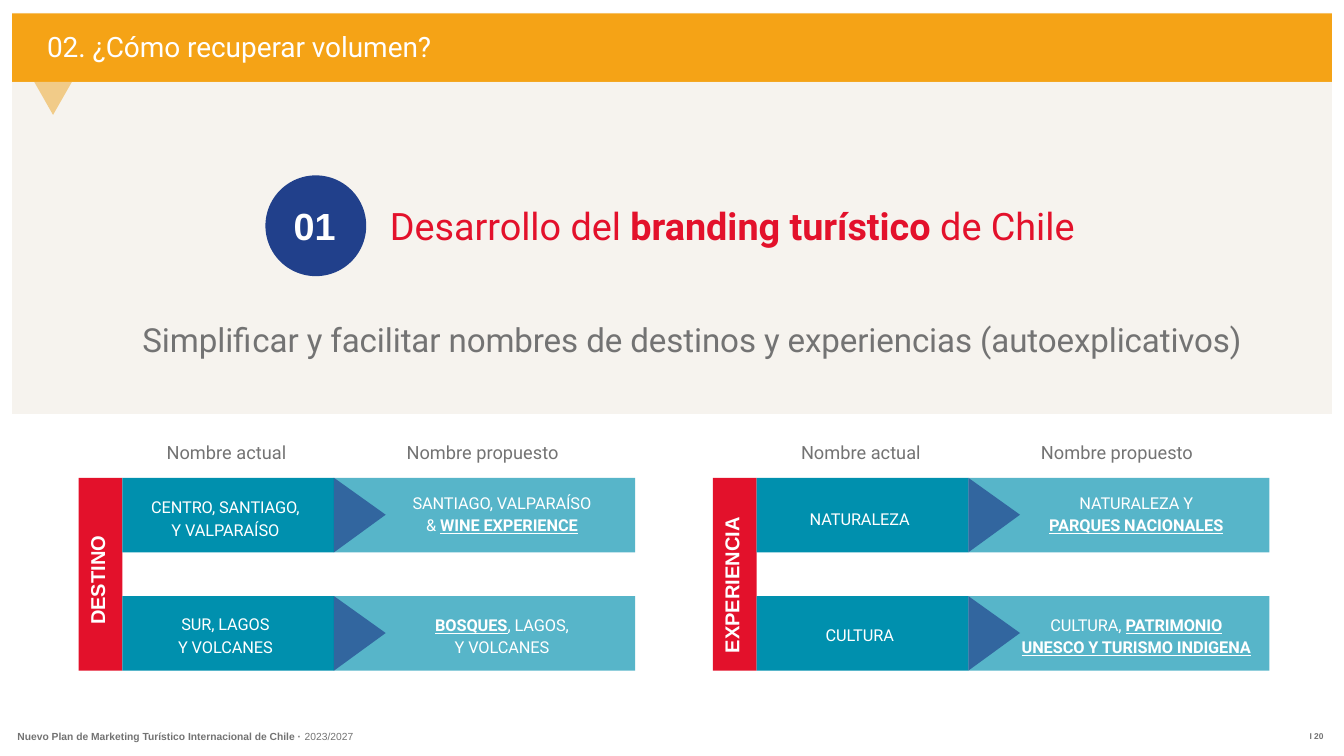
from lxml import etree
from pptx import Presentation
from pptx import util as u
from pptx.dml.color import RGBColor
from pptx.enum import shapes, text
from pptx.oxml.ns import qn

PX = 9144  # EMU per px, 100 px to the inch

ORANGE, BEIGE, NAVY, RED = "F5A316", "EFEBE2", "21408B", "E3112B"
TEAL, GREY, WHITE = "0090AE", "737373", "FFFFFF"
CELL = dict(size=17.5, color=WHITE, spacing=-10)
LABEL = dict(size=19.5, color=GREY)

# Each row: current name, its drop, proposed name, its drop (*bold underlined*)
BLOCKS = [
    (117, "DESTINO", 219, 30, [
        ("CENTRO, SANTIAGO,\nY VALPARAÍSO", 3,
         "SANTIAGO, VALPARAÍSO\n& *WINE EXPERIENCE*", -4),
        ("SUR, LAGOS\nY VOLCANES", 1, "*BOSQUES*, LAGOS,\nY VOLCANES", 2)]),
    (1061, "EXPERIENCIA", 261, -10, [
        ("NATURALEZA", 3, "NATURALEZA Y\n*PARQUES NACIONALES*", -4),
        ("CULTURA", 1,
         "CULTURA, *PATRIMONIO*\n*UNESCO Y TURISMO INDIGENA*", 2)]),
]


def rgb(hex_code):
    return RGBColor.from_string(hex_code)


def px(*lengths):
    return [n * PX for n in lengths]


def paint(sp, color, alpha=None):
    """Give a flat fill with no line or shadow; alpha is opacity in percent."""
    sp.shadow.inherit = False
    sp.line.fill.background()
    sp.fill.solid()
    sp.fill.fore_color.rgb = rgb(color)
    if alpha:
        clr = sp.fill._xPr.find(qn("a:solidFill"))[0]
        etree.SubElement(clr, qn("a:alpha")).set("val", str(alpha * 1000))
    return sp


def add_rect(s, box, color, alpha=None, kind=shapes.MSO_SHAPE.RECTANGLE):
    return paint(s.shapes.add_shape(kind, *px(*box)), color, alpha)


def add_polygon(s, points, color, alpha=None):
    fb = s.shapes.build_freeform(*points[0], scale=PX)
    fb.add_line_segments(points[1:], close=True)
    return paint(fb.convert_to_shape(), color, alpha)


def set_frame(sp, margins=(0, 2, 0, 0), anchor=text.MSO_ANCHOR.TOP):
    tf = sp.text_frame
    left, top, right, bottom = px(*margins)
    frame = dict(word_wrap=True, auto_size=text.MSO_AUTO_SIZE.NONE,
                 vertical_anchor=anchor, margin_left=left, margin_top=top,
                 margin_right=right, margin_bottom=bottom)
    for name, value in frame.items():
        setattr(tf, name, value)
    return tf


def add_run(p, words, size, color, font="Roboto", bold=False,
            underline=False, spacing=0):
    r = p.add_run()
    r.text = words
    values = dict(size=u.Pt(size), name=font, bold=bold, underline=underline)
    for name, value in values.items():
        setattr(r.font, name, value)
    r.font.color.rgb = rgb(color)
    r._r.get_or_add_rPr().set("spc", str(spacing))


def add_text(s, box, runs, line=None):
    """Add a text box with one paragraph of (words, format) runs."""
    sp = s.shapes.add_textbox(*px(*box))
    p = set_frame(sp).paragraphs[0]
    if line:
        p.line_spacing = u.Pt(line)
    for words, fmt in runs:
        add_run(p, words, **fmt)
    return sp


def fill_cell(sp, words, left, right, drop):
    """Centre the lines in a cell, lowered by drop px."""
    tf = set_frame(sp, (left, 10 + drop, right, 10 - drop),
                   text.MSO_ANCHOR.MIDDLE)
    for i, row in enumerate(words.split("\n")):
        p = tf.add_paragraph() if i else tf.paragraphs[0]
        p.alignment = text.PP_ALIGN.CENTER
        p.line_spacing = u.Pt(24)
        for j, part in enumerate(row.split("*")):
            if part:
                add_run(p, part, bold=j % 2 == 1, underline=j % 2 == 1, **CELL)


def add_header(s, x, y, w, h):
    add_rect(s, (x, y - 1, w, 1), BEIGE, 56)
    end, base = x + w, y + h
    add_polygon(s, [(x, y), (end, y), (end, base), (x + 89, base),
                    (x + 61, base + 49), (x + 33, base), (x, base)], ORANGE)
    add_text(s, (x + 52, y + 22, 640, 53),
             [("02. ¿Cómo recuperar volumen?", dict(size=30, color=WHITE, spacing=-5))])


def add_intro(s, x, y, w, h):
    add_rect(s, (x, y, w, h), BEIGE, 56)
    add_rect(s, (x + 377, y + 139, 150, 150), NAVY, kind=shapes.MSO_SHAPE.OVAL)

    title = s.shapes.title
    title.left, title.top, title.width, title.height = px(
        x + 419, y + 177, 1167, 70)
    p = set_frame(title).paragraphs[0]
    p.alignment = text.PP_ALIGN.LEFT
    tabs = etree.SubElement(p._p.get_or_add_pPr(), qn("a:tabLst"))
    tab = etree.SubElement(tabs, qn("a:tab"))
    tab.set("pos", str(143 * PX))
    tab.set("algn", "l")
    add_run(p, "01\t", 40.5, WHITE, "Arial", bold=True, spacing=-20)
    for words, bold in [("Desarrollo del ", False),
                        ("branding turístico ", True), ("de Chile", False)]:
        add_run(p, words, 40.5, RED, bold=bold, spacing=-5)

    add_text(s, (x + 194, y + 351, 1680, 62),
             [("Simplificar y facilitar nombres de destinos y experiencias "
               "(autoexplicativos)", dict(size=35.5, color=GREY, spacing=-13))])


def add_name_block(s, x, y, label, label_end, rows):
    """Add a side label with rows that lead from current to proposed names."""
    bar, current_w, proposed_w, row_h, pitch = 65, 315, 448, 111, 176
    proposed_x = x + bar + current_w
    for dx, words in [(131, "Nombre actual"), (488, "Nombre propuesto")]:
        add_text(s, (x + dx, y - 57, 240, 35), [(words, LABEL)])
    add_rect(s, (x, y, bar, pitch + row_h), RED)
    fmt = dict(size=21.5, color=WHITE, font="Arial", bold=True)
    side = add_text(s, (x + 11, y, 40, label_end), [(label, fmt)], 24.7)
    set_frame(side, (0, 0, 0, 0))._txBody.bodyPr.set("vert", "vert270")

    for i, (current, current_drop, proposed, proposed_drop) in enumerate(rows):
        top = y + i * pitch
        cell = add_rect(s, (x + bar, top, current_w, row_h), TEAL)
        fill_cell(cell, current, 0, 8, current_drop)
        cell = add_rect(s, (proposed_x, top, proposed_w, row_h), TEAL, 66)
        fill_cell(cell, proposed, 52, 0, proposed_drop)
        add_polygon(s, [(proposed_x, top), (proposed_x + 77, top + 55),
                        (proposed_x, top + row_h)], NAVY, 67)


def add_footer(s, x, y):
    fmt = dict(size=11, color=GREY, font="Arial")
    add_text(s, (x, y, 560, 18),
             [("Nuevo Plan de Marketing Turístico Internacional de Chile · ",
               dict(fmt, bold=True)), ("2023/2027", fmt)], 12.2)
    add_text(s, (x + 1923, y, 40, 16),
             [("I 20", dict(fmt, size=9, bold=True, spacing=-10))], 10.3)


def main():
    prs = Presentation()
    prs.slide_width, prs.slide_height = px(2000, 1125)
    s = prs.slides.add_slide(prs.slide_layouts[5])
    title = s.shapes.title
    add_header(s, 18, 20, 1964, 102)
    add_intro(s, 18, 122, 1964, 494)
    s.shapes._spTree.append(title._element)  # keep the title above the circle
    for x, label, label_end, _, rows in BLOCKS:
        add_name_block(s, x, 711, label, label_end, rows)
    add_footer(s, 26, 1086)
    prs.save("out.pptx")


if __name__ == "__main__":
    main()
